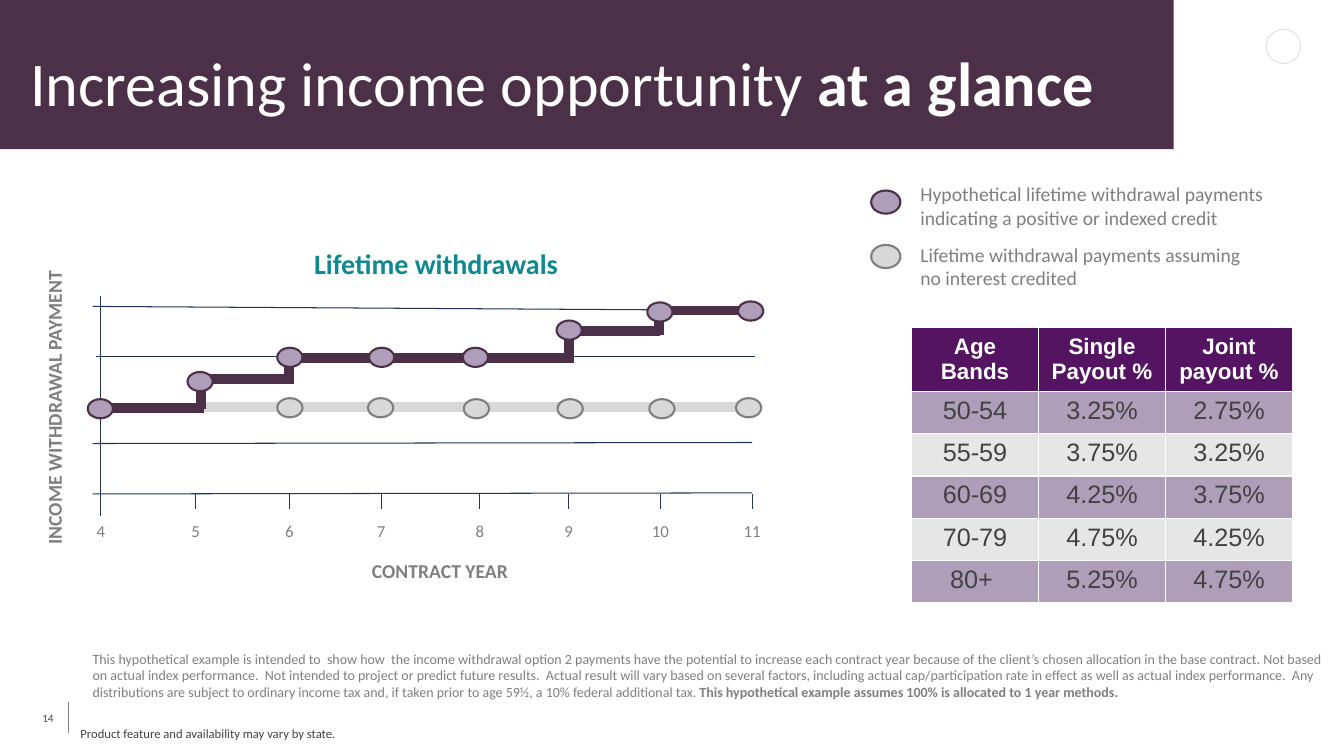
from dataclasses import dataclass

from lxml.etree import SubElement
from pptx import Presentation
from pptx.dml.color import RGBColor
from pptx.enum.shapes import MSO_CONNECTOR, MSO_SHAPE
from pptx.enum.text import MSO_ANCHOR, MSO_AUTO_SIZE, PP_ALIGN
from pptx.oxml.ns import qn
from pptx.util import Inches, Pt


@dataclass(frozen=True)
class Theme:
    plum: str = "4C3048"
    lilac: str = "AF9EB9"
    purple: str = "551461"
    navy: str = "203559"
    teal: str = "0F898F"
    grey: str = "7F7F7F"
    silver: str = "D8D8D8"
    pale: str = "E6E6E6"
    dark: str = "424242"
    number: str = "4D4D4D"
    white: str = "FFFFFF"
    body_font: str = "Calibri"
    table_font: str = "Arial"
    title_size: float = 44.4
    heading_size: float = 20
    cell_size: float = 18
    header_size: float = 16
    label_size: float = 14
    tick_size: float = 12
    note_size: float = 10
    footer_size: float = 9
    number_size: float = 8


def apply(obj, values):
    for name, value in values.items():
        setattr(obj, name, value)


def box(x, y, w, h):
    return dict(zip(("left", "top", "width", "height"), map(Inches, (x, y, w, h))))


class SlideBuilder:
    def __init__(self, slide, theme):
        self.s = slide
        self.theme = theme

    def add_runs(self, p, runs, size, color, font=None, align=PP_ALIGN.LEFT):
        p.alignment = align
        for text, bold in runs:
            r = p.add_run()
            r.text = text
            apply(r.font, {"size": Pt(size), "bold": bold, "name": font or self.theme.body_font})
            r.font.color.rgb = RGBColor.from_string(color)

    def title(self, rect, runs):
        sp = self.s.shapes.title
        apply(sp, box(*rect))
        sp.fill.solid()
        sp.fill.fore_color.rgb = RGBColor.from_string(self.theme.plum)
        margins = ("margin_left", "margin_top", "margin_right", "margin_bottom")
        apply(sp.text_frame, {
            "word_wrap": True, "auto_size": MSO_AUTO_SIZE.NONE,
            "vertical_anchor": MSO_ANCHOR.BOTTOM, **dict.fromkeys(margins, Inches(0.3))})
        self.add_runs(sp.text_frame.paragraphs[0], runs, self.theme.title_size, self.theme.white)

    def text(self, rect, runs, size, color, align=PP_ALIGN.LEFT, rotation=0, spacing=None, frame=None):
        sp = self.s.shapes.add_textbox(**box(*rect))
        sp.rotation = rotation
        apply(sp.text_frame, {"word_wrap": True, **(frame or {})})
        p = sp.text_frame.paragraphs[0]
        p.line_spacing = spacing
        self.add_runs(p, runs, size, color, align=align)

    def line(self, x1, y1, x2, y2, color, width=0.75):
        cx = self.s.shapes.add_connector(MSO_CONNECTOR.STRAIGHT, *map(Inches, (x1, y1, x2, y2)))
        cx.line.color.rgb = RGBColor.from_string(color)
        cx.line.width = Pt(width)
        SubElement(cx._element.spPr, qn("a:effectLst"))

    def marker(self, x, y, fill, line, w=0.25, h=0.19, shape=MSO_SHAPE.FLOWCHART_CONNECTOR, weight=1.5):
        sp = self.s.shapes.add_shape(shape, **box(x, y, w, h))
        sp.shadow.inherit = False
        sp.fill.solid()
        sp.fill.fore_color.rgb = RGBColor.from_string(fill)
        sp.line.color.rgb = RGBColor.from_string(line)
        sp.line.width = Pt(weight)

    def table(self, x, y, col_width, heights, rows):
        t = self.theme
        cols = len(rows[0])
        rect = box(x, y, col_width * cols, sum(heights))
        table = self.s.shapes.add_table(len(rows), cols, **rect).table
        for col in table.columns:
            col.width = Inches(col_width)
        for i, values in enumerate(rows):
            table.rows[i].height = Inches(heights[i])
            header = i == 0
            fill = t.purple if header else (t.pale, t.lilac)[i % 2]
            size, color = (t.header_size, t.white) if header else (t.cell_size, t.dark)
            for j, value in enumerate(values):
                cell = table.cell(i, j)
                cell.vertical_anchor = MSO_ANCHOR.MIDDLE if header else MSO_ANCHOR.TOP
                cell.fill.solid()
                cell.fill.fore_color.rgb = RGBColor.from_string(fill)
                self.add_runs(cell.text_frame.paragraphs[0], [(value, header)], size, color,
                              t.table_font, PP_ALIGN.CENTER)


TICKS = (1, 1.94, 2.87, 3.78, 4.76, 5.64, 6.55, 7.46)
GRID = [(1, 2.94, 1, 5.12), (0.95, 3.54, 7.49, 3.54), (0.92, 3.04, 7.55, 3.08),
        (0.92, 4.4, 7.46, 4.39), (0.92, 4.9, 7.46, 4.89)]
STEPS = [(1.08, 4.05, 2.02, 4.05), (1.96, 3.76, 2.9, 3.76), (2.82, 3.55, 5.65, 3.55),
         (5.61, 3.28, 6.55, 3.28), (6.52, 3.08, 7.46, 3.08), (1.99, 3.79, 1.99, 4.06),
         (2.87, 3.53, 2.87, 3.81), (5.64, 3.32, 5.64, 3.6), (6.54, 3.05, 6.54, 3.32)]
FLAT_MARKERS = [(2.75, 3.95), (3.65, 3.95), (4.6, 3.96), (5.53, 3.96), (6.44, 3.96), (7.3, 3.95)]
STEP_MARKERS = [(0.87, 3.96), (1.86, 3.69), (2.75, 3.45), (3.66, 3.45),
                (4.59, 3.45), (5.52, 3.18), (6.42, 3), (7.32, 2.99)]
PAYOUTS = [("Age Bands", "Single Payout %", "Joint payout %"),
           ("50-54", "3.25%", "2.75%"), ("55-59", "3.75%", "3.25%"),
           ("60-69", "4.25%", "3.75%"), ("70-79", "4.75%", "4.25%"),
           ("80+ ", "5.25%", "4.75%")]
DISCLAIMER = (
    "This hypothetical example is intended to  show how  the income withdrawal option 2 payments "
    "have the potential to increase each contract year because of the client’s chosen allocation "
    "in the base contract. Not based on actual index performance.  Not intended to project or "
    "predict future results.  Actual result will vary based on several factors, including actual "
    "cap/participation rate in effect as well as actual index performance.  Any distributions are "
    "subject to ordinary income tax and, if taken prior to age 59½, a 10% federal additional tax. ")


def draw_chart(b):
    t = b.theme
    b.line(1.97, 4.04, 7.39, 4.04, t.silver, 7)
    for x, y in FLAT_MARKERS:
        b.marker(x, y, t.silver, t.grey)
    for ends in GRID:
        b.line(*ends, t.navy)
    for year, x in enumerate(TICKS, start=4):
        if year > 4:
            b.line(x, 4.9, x, 5.05, t.navy)
        b.text((x - 0.33, 5.12, 0.66, 0.25), [(str(year), False)], t.tick_size, t.grey, PP_ALIGN.CENTER)
    for ends in STEPS:
        b.line(*ends, t.plum, 7)
    for x, y in STEP_MARKERS:
        b.marker(x, y, t.lilac, t.plum)
    b.text((1.63, 2.4, 5.39, 0.36), [("Lifetime withdrawals", True)], t.heading_size, t.teal, PP_ALIGN.CENTER)
    b.text((3.59, 5.5, 2.71, 0.31), [("CONTRACT YEAR", True)], t.label_size, t.grey)
    b.text((-1.16, 3.64, 3.39, 0.33), [("INCOME WITHDRAWAL PAYMENT", True)], t.label_size, t.grey, rotation=270)


def draw_legend(b):
    t = b.theme
    b.text((9.03, 1.76, 3.68, 0.57),
           [("Hypothetical lifetime withdrawal payments indicating a positive or indexed credit", False)],
           t.label_size, t.grey)
    b.text((9.03, 2.36, 3.58, 0.57),
           [("Lifetime withdrawal payments assuming no interest credited", False)], t.label_size, t.grey)
    b.marker(8.64, 1.89, t.lilac, t.plum, 0.29, 0.23)
    b.marker(8.64, 2.43, t.silver, t.grey, 0.29, 0.23)


def draw_footer(b):
    t = b.theme
    b.line(0.68, 6.96, 0.68, 7.27, t.grey)
    b.text((0.42, 6.92, 0.4, 0.4), [("14", False)], t.number_size, t.number,
           frame={"margin_left": 0, "margin_right": 0, "vertical_anchor": MSO_ANCHOR.MIDDLE})
    b.text((0.82, 6.4, 12.45, 0.61),
           [(DISCLAIMER, False),
            ("This hypothetical example assumes 100% is allocated to 1 year methods.", True)],
           t.note_size, t.grey)
    b.text((0.7, 7.17, 3.4, 0.25), [("Product feature and availability may vary by state.", False)],
           t.footer_size, t.dark, spacing=0.9)


def main():
    prs = Presentation()
    apply(prs, {"slide_width": Inches(13.33), "slide_height": Inches(7.5)})
    b = SlideBuilder(prs.slides.add_slide(prs.slide_layouts[5]), Theme())
    b.title((0, 0, 11.64, 1.48), [("Increasing income opportunity ", False), ("at a glance", True)])
    b.marker(12.56, 0.29, b.theme.white, b.theme.silver, 0.34, 0.34, MSO_SHAPE.OVAL, 0.5)
    draw_chart(b)
    draw_legend(b)
    b.table(9.04, 3.25, 1.26, [0.62] + [0.42] * 5, PAYOUTS)
    draw_footer(b)
    prs.save("out.pptx")


if __name__ == "__main__":
    main()
